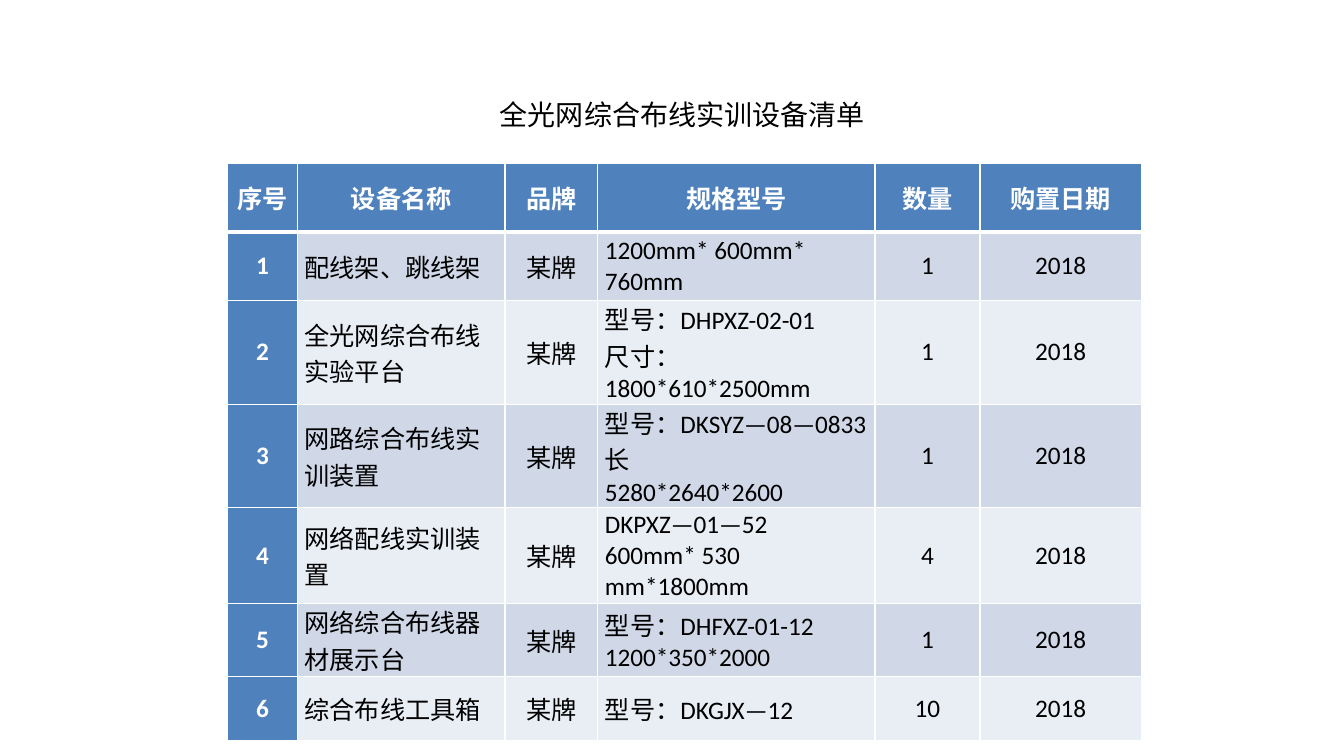
from lxml import etree
from pptx import Presentation
from pptx.dml.color import RGBColor
from pptx.enum.text import MSO_ANCHOR, PP_ALIGN
from pptx.oxml.ns import qn
from pptx.util import Inches, Pt

WHITE = RGBColor(0xFF, 0xFF, 0xFF)
BLACK = RGBColor(0, 0, 0)
BLUE = RGBColor(0x4F, 0x81, 0xBD)
BANDS = (RGBColor(0xE9, 0xED, 0xF4), RGBColor(0xD0, 0xD8, 0xE8))
FONT = "Calibri"

BRAND = "某牌"
YEAR = "2018"
HEADINGS = ("序号", "设备名称", "品牌", "规格型号", "数量", "购置日期")
EQUIPMENT = (
    ("配线架、跳线架", "1200mm* 600mm* 760mm", 1),
    ("全光网综合布线实验平台", "型号：DHPXZ-02-01\v尺寸：1800*610*2500mm", 1),
    ("网路综合布线实训装置", "型号：DKSYZ—08—0833\t长\v5280*2640*2600", 1),
    ("网络配线实训装置", "DKPXZ—01—52\v600mm* 530 mm*1800mm", 4),
    ("网络综合布线器材展示台", "型号：DHFXZ-01-12\v1200*350*2000", 1),
    ("综合布线工具箱", "型号：DKGJX—12", 10),
)
COLUMN_WIDTHS = (0.69, 2.06, 0.92, 2.75, 1.04, 1.6)
ROW_HEIGHTS = (0.68, 0.68, 0.95, 0.95, 0.95, 0.65, 0.64)
LEFT_ALIGNED = (1, 3)
CELL_FORMAT = {
    "margin_left": Inches(0.07),
    "margin_right": Inches(0.07),
    "margin_top": 0,
    "margin_bottom": 0,
    "vertical_anchor": MSO_ANCHOR.MIDDLE,
}


def style_text(paragraph, size, color, bold=False):
    """Set the font of every run in a paragraph."""
    for run in paragraph.runs:
        run.font.name = FONT
        run.font.size = Pt(size)
        run.font.bold = bold
        run.font.color.rgb = color


def add_borders(cell, bottom_width):
    """Draw white cell borders, with a chosen bottom width in points."""
    properties = cell._tc.get_or_add_tcPr()
    widths = {"a:lnL": 1, "a:lnR": 1, "a:lnT": 1, "a:lnB": bottom_width}
    for position, (tag, width) in enumerate(widths.items()):
        line = etree.Element(qn(tag), w=str(Pt(width)))
        fill = etree.SubElement(line, qn("a:solidFill"))
        etree.SubElement(fill, qn("a:srgbClr"), val=str(WHITE))
        properties.insert(position, line)


def fill_cell(cell, text, row, column):
    """Write and style one cell according to its row and column."""
    emphasized = row == 0 or column == 0
    cell.text = text
    for name, value in CELL_FORMAT.items():
        setattr(cell, name, value)
    cell.fill.solid()
    cell.fill.fore_color.rgb = BLUE if emphasized else BANDS[row % 2]
    left_aligned = row > 0 and column in LEFT_ALIGNED
    for paragraph in cell.text_frame.paragraphs:
        paragraph.alignment = PP_ALIGN.LEFT if left_aligned else PP_ALIGN.CENTER
        style_text(paragraph, 18, WHITE if emphasized else BLACK, emphasized)
    add_borders(cell, 3 if row == 0 else 1)


def add_title(slide, left, top, width, height):
    """Place the list title in the given box."""
    title = slide.shapes.add_textbox(
        Inches(left), Inches(top), Inches(width), Inches(height)
    )
    title.text_frame.word_wrap = True
    paragraph = title.text_frame.paragraphs[0]
    paragraph.text = "全光网综合布线实训设备清单"
    style_text(paragraph, 20, BLACK)


def add_equipment_table(slide, left, top, width, height):
    """Place the equipment list in the given box."""
    records = [HEADINGS] + [
        (str(number), name, BRAND, model, str(quantity), YEAR)
        for number, (name, model, quantity) in enumerate(EQUIPMENT, 1)
    ]
    equipment = slide.shapes.add_table(
        len(records), len(HEADINGS),
        Inches(left), Inches(top), Inches(width), Inches(height),
    ).table
    for column, share in zip(equipment.columns, COLUMN_WIDTHS):
        column.width = Inches(width * share / sum(COLUMN_WIDTHS))
    for row, share in zip(equipment.rows, ROW_HEIGHTS):
        row.height = Inches(height * share / sum(ROW_HEIGHTS))
    for row, record in enumerate(records):
        for column, text in enumerate(record):
            fill_cell(equipment.cell(row, column), text, row, column)


def main():
    """Build the equipment list slide."""
    presentation = Presentation()
    presentation.slide_width = Inches(13.33)
    presentation.slide_height = Inches(7.5)
    slide = presentation.slides.add_slide(presentation.slide_layouts[6])
    add_equipment_table(slide, 2.26, 1.62, 9.06, 5.5)
    add_title(slide, 4.86, 0.92, 4.57, 0.44)
    presentation.save("out.pptx")


if __name__ == "__main__":
    main()
